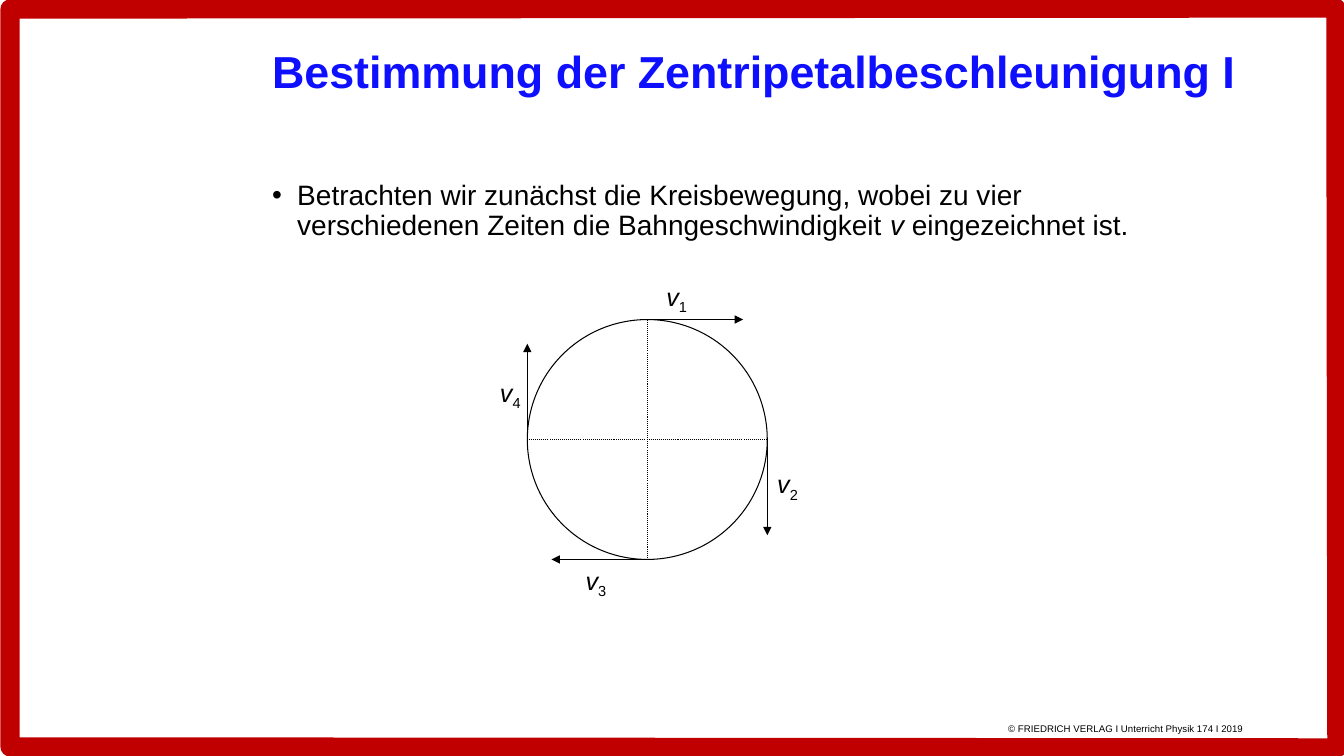
from lxml.etree import SubElement
from pptx import Presentation
from pptx.dml.color import RGBColor
from pptx.enum.dml import MSO_LINE
from pptx.enum.shapes import MSO_CONNECTOR, MSO_SHAPE
from pptx.oxml.ns import qn
from pptx.util import Inches, Pt

BLACK, RED, BLUE = "000000", "C00000", "0F0FFF"
CX, CY, RADIUS, ARROW = 6.42, 4.36, 1.19, 0.95


def color(value):
    """Turn a hex string into a colour."""
    return RGBColor.from_string(value)


def add_run(p, text, size=18, fill=BLACK, bold=False, italic=False, base=0):
    """Add a formatted run; base shifts it up or down in percent."""
    r = p.add_run()
    r.text = text
    r.font.name, r.font.size = "Arial", Pt(size)
    r.font.bold, r.font.italic = bold, italic
    r.font.color.rgb = color(fill)
    if base:
        r._r.get_or_add_rPr().set("baseline", str(base * 1000))


def add_box(s, left, top, width, height, wrap=True, spacing=None):
    """Add a text box and return its first paragraph."""
    tf = s.shapes.add_textbox(*map(Inches, (left, top, width, height))).text_frame
    tf.word_wrap = wrap
    p = tf.paragraphs[0]
    p.line_spacing = spacing
    return p


def add_bullet(p, indent):
    """Give a paragraph a hanging round bullet."""
    pPr = p._p.get_or_add_pPr()
    pPr.set("marL", str(Inches(indent)))
    pPr.set("indent", str(-Inches(indent)))
    SubElement(pPr, qn("a:buFont")).set("typeface", "Arial")
    SubElement(pPr, qn("a:buChar")).set("char", "•")


def outline(sp, fill, width):
    """Leave a shape unfilled, with a plain outline."""
    sp.shadow.inherit = False
    sp.fill.background()
    sp.line.color.rgb = color(fill)
    sp.line.width = Pt(width)


def add_frame(s):
    """Draw the red border around the slide."""
    corners = [(13.25, 0.08), (13.26, 7.42), (0.1, 7.41)]
    fb = s.shapes.build_freeform(Inches(0.1), Inches(0.09))
    fb.add_line_segments([(Inches(x), Inches(y)) for x, y in corners], close=True)
    outline(fb.convert_to_shape(), RED, 13.75)


def add_line(s, x1, y1, x2, y2, dotted=False, arrow=False):
    """Draw a thin line, dotted or with an arrowhead at its end."""
    cxn = s.shapes.add_connector(MSO_CONNECTOR.STRAIGHT, *map(Inches, (x1, y1, x2, y2)))
    cxn.line.color.rgb = color(BLACK)
    cxn.line.width = Pt(0.75)
    if dotted:
        cxn.line.dash_style = MSO_LINE.ROUND_DOT
    if arrow:
        SubElement(cxn.line._get_or_add_ln(), qn("a:tailEnd")).set("type", "triangle")
    SubElement(cxn._element.spPr, qn("a:effectLst"))


def add_circle(s):
    """Draw the circular path with its two diameters."""
    sp = s.shapes.add_shape(MSO_SHAPE.OVAL, Inches(CX - RADIUS), Inches(CY - RADIUS),
                            Inches(2 * RADIUS), Inches(2 * RADIUS))
    outline(sp, BLACK, 0.75)
    add_line(s, CX, CY - RADIUS, CX, CY + RADIUS, dotted=True)
    add_line(s, CX + RADIUS, CY, CX - RADIUS, CY, dotted=True)


def add_velocity(s, number, dx, dy, left, top):
    """Draw a tangent arrow at the point in direction dx, dy and label it."""
    x, y = CX + dx * RADIUS, CY + dy * RADIUS
    add_line(s, x, y, x - dy * ARROW, y + dx * ARROW, arrow=True)
    p = add_box(s, left, top, 0.42, 0.4, wrap=False)
    add_run(p, "v", italic=True)
    add_run(p, str(number), base=-25)


def main():
    """Build the slide and save it."""
    prs = Presentation()
    prs.slide_width, prs.slide_height = Inches(13.33), Inches(7.5)
    s = prs.slides.add_slide(prs.slide_layouts[6])

    add_frame(s)
    p = add_box(s, 9.9, 7.1, 3.3, 0.3)
    add_run(p, "© FRIEDRICH VERLAG I Unterricht Physik 174 I 2019", size=12, base=30)

    p = add_box(s, 2.6, 0.44, 9.97, 1.29, spacing=0.9)
    add_run(p, "Bestimmung der Zentripetalbeschleunigung I", size=32, fill=BLUE, bold=True)

    p = add_box(s, 2.6, 1.75, 9, 0.86, spacing=0.9)
    add_bullet(p, 0.25)
    add_run(p, "Betrachten wir zunächst die Kreisbewegung, wobei zu vier "
               "verschiedenen Zeiten die Bahngeschwindigkeit ", size=20)
    add_run(p, "v", size=20, italic=True)
    add_run(p, " eingezeichnet ist.", size=20)

    add_circle(s)
    velocities = [(0, -1, 6.51, 2.74), (1, 0, 7.61, 4.6),
                  (0, 1, 5.71, 5.56), (-1, 0, 4.86, 3.69)]
    for number, velocity in enumerate(velocities, 1):
        add_velocity(s, number, *velocity)

    prs.save("out.pptx")


if __name__ == "__main__":
    main()
